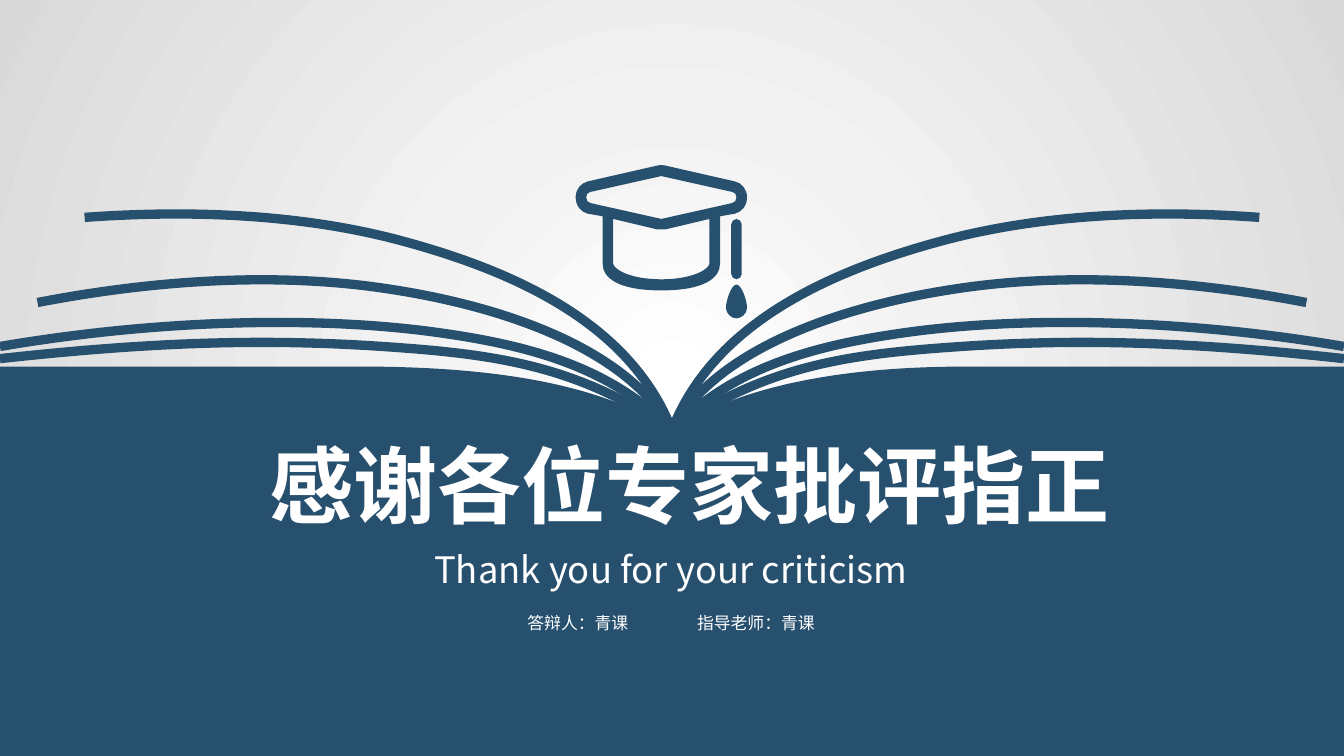
from pptx import Presentation
from pptx.dml.color import RGBColor
from pptx.enum import text
from pptx.oxml import parse_xml
from pptx.oxml.ns import nsdecls
from pptx.util import Cm, Pt

COLORS = {"navy": "27506E", "white": "FFFFFF", "light": "F2F2F2", "gray": "D9D9D9"}
FONT = "Noto Sans CJK SC"
WIDTH, HEIGHT = 25.4, 14.29
SPINE_X, SPINE_Y = 12.7, 8.13
CAP_X, TASSEL_X = 12.5, 13.92
STEPS = 16

PAGES = [
    [(13.87, 6.93, 15.42, 6.5, 17.4, 6.25), (19.25, 6.02, 22.12, 5.99, 25.4, 6.55)],
    [(14.35, 7.01, 15.75, 6.73, 17.75, 6.58), (20.07, 6.4, 22.23, 6.43, 25.4, 6.78)],
    [(13.56, 6.55, 16, 5.77, 18.08, 5.46), (19.91, 5.18, 22.15, 5.23, 24.69, 5.72)],
    [(13.51, 6.05, 15.8, 5.08, 17.93, 4.52), (19.71, 4.06, 21.74, 3.96, 23.8, 4.11)],
]
COVER = [
    (0, 6.93), (6.58, 6.93), (9.47, 6.91, 11.38, 7.29, SPINE_X, SPINE_Y),
    (14.07, 7.24, 16.08, 6.93, 18.26, 6.93),
    (WIDTH, 6.93), (WIDTH, HEIGHT), (0, HEIGHT),
]
CAP_HALVES = [
    [(CAP_X, 3.12), (12.53, 3.12, 12.55, 3.12, 12.57, 3.13), (13.89, 3.43),
     (14.02, 3.46, 14.12, 3.58, 14.12, 3.73),
     (14.12, 3.89, 14.02, 4.01, 13.89, 4.04), (13.61, 4.09), (13.61, 4.98),
     (13.61, 5.26, 13.31, 5.49, CAP_X, 5.49)],
    [(CAP_X, 3.33), (13.84, 3.63), (13.89, 3.63, 13.92, 3.68, 13.92, 3.73),
     (13.92, 3.78, 13.89, 3.84, 13.84, 3.84), (CAP_X, 4.14)],
    [(CAP_X, 4.34), (12.57, 4.34), (13.41, 4.14), (13.41, 4.98),
     (13.41, 5.08, 13.11, 5.28, CAP_X, 5.28)],
]
CORD_HALF = [
    (TASSEL_X, 4.14), (13.97, 4.14, 14.02, 4.19, 14.02, 4.24),
    (14.02, 5.18), (14.02, 5.23, 13.97, 5.28, TASSEL_X, 5.28)]
DROP_HALF = [
    (TASSEL_X, 5.38), (14.02, 5.38, 14.12, 5.69, 14.12, 5.82),
    (14.12, 5.92, 14.02, 6.02, TASSEL_X, 6.02)]


def rgb(name):
    return RGBColor.from_string(COLORS[name])


def pairs(seg):
    return list(zip(seg[::2], seg[1::2]))


def mirror(segments, axis):
    return [tuple(v if i % 2 else 2 * axis - v for i, v in enumerate(seg))
            for seg in segments]


def symmetric(half, axis):
    points = [pt for seg in mirror(half, axis) for pt in pairs(seg)][::-1]
    contour, position = list(half), 1
    for seg in half[:0:-1]:
        count = len(seg) // 2
        contour.append(sum(points[position:position + count], ()))
        position += count
    return contour


def trace(segments):
    points = [segments[0]]
    for seg in segments[1:]:
        if len(seg) == 2:
            points.append(seg)
            continue
        controls = [points[-1], *pairs(seg)]
        for i in range(1, STEPS + 1):
            t = i / STEPS
            weights = ((1 - t) ** 3, 3 * t * (1 - t) ** 2, 3 * t * t * (1 - t), t ** 3)
            points.append(tuple(sum(w * c[k] for w, c in zip(weights, controls))
                                for k in (0, 1)))
    return points


def add_outline(parent, contours, close=True):
    xs, ys = zip(*(pt for c in contours for pt in trace(c)))
    builder = parent.shapes.build_freeform(Cm(min(xs)), Cm(min(ys)))
    builder.add_line_segments([(Cm(max(xs)), Cm(max(ys)))], close=False)
    sp = builder.convert_to_shape()
    outline = sp._element.xpath(".//a:path")[0]
    for child in list(outline):
        outline.remove(child)
    for contour in contours:
        for i, seg in enumerate(contour):
            tag = "moveTo" if i == 0 else "lnTo" if len(seg) == 2 else "cubicBezTo"
            pts = "".join(f'<a:pt x="{Cm(x - min(xs))}" y="{Cm(y - min(ys))}"/>'
                          for x, y in pairs(seg))
            outline.append(parse_xml(f'<a:{tag} {nsdecls("a")}>{pts}</a:{tag}>'))
        if close:
            outline.append(parse_xml(f'<a:close {nsdecls("a")}/>'))
    sp.shadow.inherit = False
    return sp


def add_silhouette(parent, *contours):
    sp = add_outline(parent, contours)
    sp.fill.solid()
    sp.fill.fore_color.rgb = rgb("navy")
    sp.line.fill.background()


def add_page(parent, segments):
    sp = add_outline(parent, [segments], close=False)
    sp.fill.background()
    sp.line.color.rgb = rgb("navy")
    sp.line.width = Pt(5)


def write_text(sp, box, content, size, bold=False, wrap=True, inset=0):
    sp.left, sp.top, sp.width, sp.height = map(Cm, box)
    tf = sp.text_frame
    tf.text = content
    tf.word_wrap = wrap
    tf.auto_size = text.MSO_AUTO_SIZE.SHAPE_TO_FIT_TEXT
    tf.vertical_anchor = text.MSO_ANCHOR.TOP
    tf.margin_left = tf.margin_right = Cm(2 * inset)
    tf.margin_top = tf.margin_bottom = Cm(inset)
    p = tf.paragraphs[0]
    p.alignment = text.PP_ALIGN.CENTER
    p.space_before = Pt(0)
    p.font.name = FONT
    p.font.size = Pt(size)
    p.font.bold = bold
    p.font.color.rgb = rgb("white")
    ea = parse_xml(f'<a:ea {nsdecls("a")} typeface="{FONT}"/>')
    p.runs[0].font._element.append(ea)


def add_text(parent, box, *args, **kwargs):
    write_text(parent.shapes.add_textbox(*map(Cm, box)), box, *args, **kwargs)


def set_background(s):
    stops = "".join(
        f'<a:gs pos="{pos * 1000}"><a:srgbClr val="{COLORS[name]}"/></a:gs>'
        for pos, name in ((0, "white"), (35, "light"), (100, "gray")))
    bg = parse_xml(
        f'<p:bg {nsdecls("p", "a")}><p:bgPr><a:gradFill rotWithShape="1">'
        f'<a:gsLst>{stops}</a:gsLst><a:path path="circle">'
        '<a:fillToRect l="50000" t="50000" r="50000" b="50000"/></a:path>'
        '</a:gradFill><a:effectLst/></p:bgPr></p:bg>')
    s.element.cSld.insert(0, bg)


def main():
    prs = Presentation()
    prs.slide_width, prs.slide_height = Cm(WIDTH), Cm(HEIGHT)
    s = prs.slides.add_slide(prs.slide_layouts[5])
    set_background(s)

    add_silhouette(s, COVER)
    book = s.shapes.add_group_shape()
    for page in PAGES:
        right = [(SPINE_X, SPINE_Y), *page]
        add_page(book, mirror(right, SPINE_X))
        add_page(book, right)

    title = s.shapes.title
    write_text(title, (4.72, 8.2, 16.61, 1.93), "感谢各位专家批评指正", 45, bold=True)
    s.shapes._spTree.append(title._element)
    add_text(s, (7.16, 10.34, 11.05, 0.84), "Thank you for your criticism", 19.5)
    names = s.shapes.add_group_shape()
    for left, width, content in ((9.7, 2.44, "答辩人：青课"), (12.9, 2.77, "指导老师：青课")):
        add_text(names, (left, 11.46, width, 0.64), content, 9, wrap=False, inset=0.13)

    cap = s.shapes.add_group_shape()
    add_silhouette(cap, *(symmetric(half, CAP_X) for half in CAP_HALVES))
    for half in (CORD_HALF, DROP_HALF):
        add_silhouette(cap, symmetric(half, TASSEL_X))
    prs.save("out.pptx")


if __name__ == "__main__":
    main()
